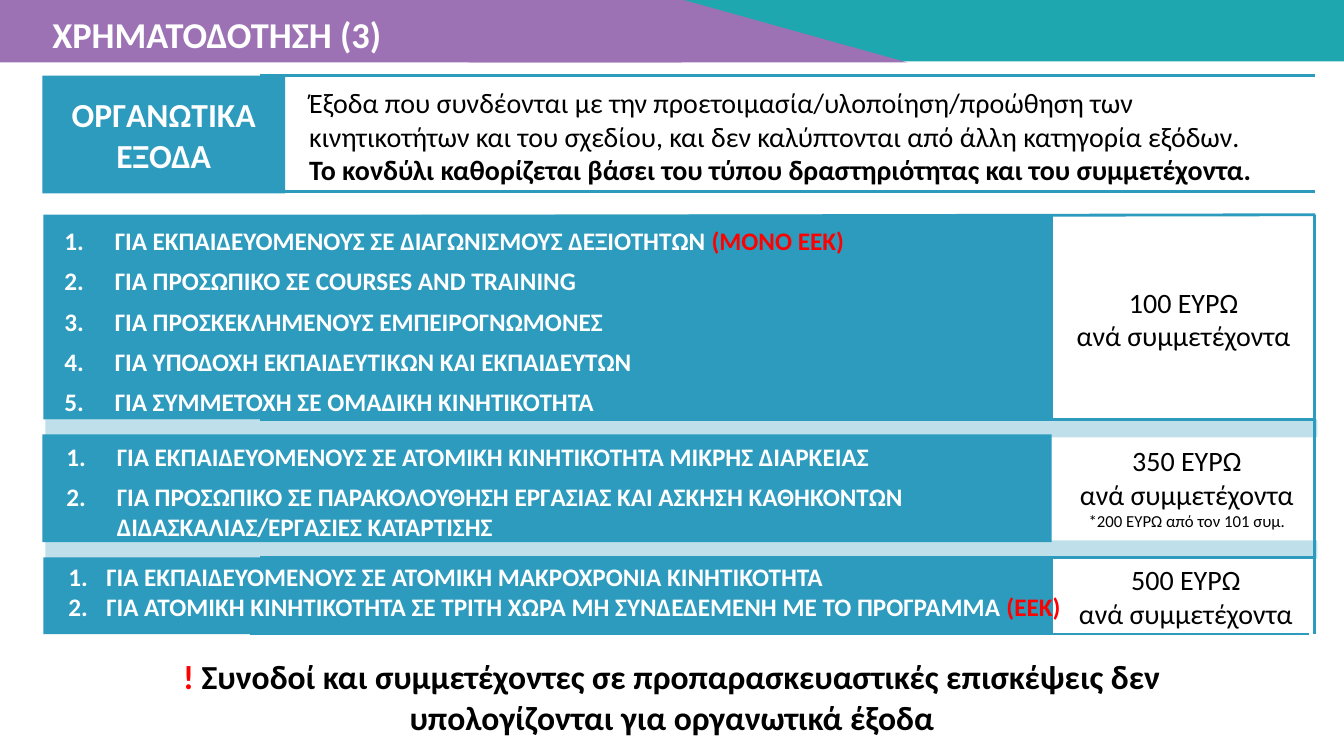
from lxml import etree
from pptx import Presentation
from pptx.dml.color import RGBColor
from pptx.enum.shapes import MSO_CONNECTOR, MSO_SHAPE
from pptx.enum.text import MSO_ANCHOR, MSO_AUTO_SIZE, PP_ALIGN
from pptx.oxml.ns import qn
from pptx.util import Pt

RECT, PEAK = MSO_SHAPE.RECTANGLE, MSO_SHAPE.ISOSCELES_TRIANGLE
LINE = MSO_CONNECTOR.STRAIGHT
LEFT, MID = PP_ALIGN.LEFT, PP_ALIGN.CENTER
TOP, CENTER = MSO_ANCHOR.TOP, MSO_ANCHOR.MIDDLE
FIXED = MSO_AUTO_SIZE.NONE

COLORS = {"teal": "1EA7AE", "purple": "9D72B5", "blue": "2D9BBD",
          "white": "FFFFFF", "black": "000000", "red": "FF0000"}


def color(name):
    return RGBColor.from_string(COLORS[name])


class Board:
    """Holds the style and the current slide."""
    font = "Calibri"
    stroke = 2

    def __init__(self, deck):
        self.slide = deck.slides.add_slide(deck.slide_layouts[5])
        self.shapes = self.slide.shapes

    def block(self, box, fill="blue", kind=RECT, alpha=None):
        shape = self.shapes.add_shape(kind, *map(Pt, box))
        shape.shadow.inherit = False
        shape.fill.solid()
        shape.fill.fore_color.rgb = color(fill)
        shape.line.fill.background()
        if alpha:
            tint = shape.element.spPr.find(".//" + qn("a:srgbClr"))
            etree.SubElement(tint, qn("a:alpha")).set("val", str(alpha * 1000))
        return shape

    def rule(self, *ends):
        line = self.shapes.add_connector(LINE, *map(Pt, ends))
        line.line.color.rgb = color("blue")
        line.line.width = Pt(self.stroke)
        etree.SubElement(line.element.spPr, qn("a:effectLst"))

    def label(self, shape, paras, size, tone="black", bold=False, align=LEFT,
              anchor=TOP, wrap=True, indent=0, after=0):
        """Each paragraph is a list of (text, changes) runs."""
        frame = shape.text_frame
        look = {"auto_size": FIXED, "word_wrap": wrap, "vertical_anchor": anchor}
        for key, value in look.items():
            setattr(frame, key, value)
        for index, runs in enumerate(paras):
            para = frame.add_paragraph() if index else frame.paragraphs[0]
            para.alignment = align
            para.space_after = Pt(after)
            if indent:
                self.number(para, indent)
            for text, change in runs:
                run = para.add_run()
                run.text = text
                style = {"name": self.font, "size": size, "bold": bold,
                         "tone": tone, **change}
                run.font.color.rgb = color(style.pop("tone"))
                style["size"] = Pt(style["size"])
                for key, value in style.items():
                    setattr(run.font, key, value)

    def number(self, para, indent):
        props = para._p.get_or_add_pPr()
        props.set("marL", str(Pt(indent)))
        props.set("indent", str(-Pt(indent)))
        mark = etree.SubElement(props, qn("a:buFont"))
        mark.set("typeface", "+mj-lt")
        etree.SubElement(props, qn("a:buAutoNum")).set("type", "arabicPeriod")

    def text(self, box, paras, size, **style):
        self.label(self.shapes.add_textbox(*map(Pt, box)), paras, size, **style)

    def title(self, box, words, size, **style):
        head = self.shapes.title
        for key, value in zip(("left", "top", "width", "height"), box):
            setattr(head, key, Pt(value))
        self.label(head, [[(words, {})]], size, **style)
        # Bring the title in front of the header bands
        head.element.getparent().append(head.element)


RED = {"tone": "red"}
EACH = [("ανά συμμετέχοντα", {})]

# Block, price box, list box, indent, space after, price lines, items
ROWS = [
    ((31, 153.4, 721, 146.2), (758, 200.2, 175, 55.4), (38.9, 157.7, 713, 145), 36, 7,
     [[("100 ΕΥΡΩ", {})], EACH],
     [[("ΓΙΑ ΕΚΠΑΙΔΕΥΟΜΕΝΟΥΣ ΣΕ ΔΙΑΓΩΝΙΣΜΟΥΣ ΔΕΞΙΟΤΗΤΩΝ ", {}), ("(ΜΟΝΟ ΕΕΚ)", RED)],
      [("ΓΙΑ ΠΡΟΣΩΠΙΚΟ ΣΕ COURSES AND TRAINING", {})],
      [("ΓΙΑ ΠΡΟΣΚΕΚΛΗΜΕΝΟΥΣ ΕΜΠΕΙΡΟΓΝΩΜΟΝΕΣ", {})],
      [("ΓΙΑ ΥΠΟΔΟΧΗ ΕΚΠΑΙΔΕΥΤΙΚΩΝ ΚΑΙ ΕΚΠΑΙΔΕΥΤΩΝ", {})],
      [("ΓΙΑ ΣΥΜΜΕΤΟΧΗ ΣΕ ΟΜΑΔΙΚΗ ΚΙΝΗΤΙΚΟΤΗΤΑ", {})]]),
    ((30.2, 310.3, 721, 77), (760.3, 313.2, 175, 70.6), (40.3, 311.8, 755, 152), 36, 7,
     [[("350 ΕΥΡΩ", {})], EACH, [("*200 ΕΥΡΩ από τον 101 συμ.", {"size": 12})]],
     [[("ΓΙΑ ΕΚΠΑΙΔΕΥΟΜΕΝΟΥΣ ΣΕ ΑΤΟΜΙΚΗ ΚΙΝΗΤΙΚΟΤΗΤΑ ΜΙΚΡΗΣ ΔΙΑΡΚΕΙΑΣ", {})],
      [("ΓΙΑ ΠΡΟΣΩΠΙΚΟ ΣΕ ΠΑΡΑΚΟΛΟΥΘΗΣΗ ΕΡΓΑΣΙΑΣ ΚΑΙ ΑΣΚΗΣΗ ΚΑΘΗΚΟΝΤΩΝ "
        "ΔΙΔΑΣΚΑΛΙΑΣ/ΕΡΓΑΣΙΕΣ ΚΑΤΑΡΤΙΣΗΣ", {})]]),
    ((31, 398.2, 721, 54.7), (759.6, 398.2, 175, 55.4), (41.8, 397.4, 727, 51), 27, 0,
     [[("500 ΕΥΡΩ", {})], EACH],
     [[("ΓΙΑ ΕΚΠΑΙΔΕΥΟΜΕΝΟΥΣ ΣΕ ΑΤΟΜΙΚΗ ΜΑΚΡΟΧΡΟΝΙΑ ΚΙΝΗΤΙΚΟΤΗΤΑ", {})],
      [("ΓΙΑ ΑΤΟΜΙΚΗ ΚΙΝΗΤΙΚΟΤΗΤΑ ΣΕ ΤΡΙΤΗ ΧΩΡΑ ΜΗ ΣΥΝΔΕΔΕΜΕΝΗ ΜΕ ΤΟ ΠΡΟΓΡΑΜΜΑ ", {}),
       ("(ΕΕΚ)", RED)]]),
]


def main():
    deck = Presentation()
    deck.slide_width, deck.slide_height = Pt(960), Pt(540)
    board = Board(deck)

    # Header bands and title
    board.block((347, 0, 613, 43.9), "teal")
    board.block((0, 0, 487, 44.6), "purple")
    peak = board.block((334.8, 0, 313.2, 44.6), "purple", PEAK)
    peak.adjustments[0] = 0.49
    board.title((30.2, 5, 252, 38.9), "ΧΡΗΜΑΤΟΔΟΤΗΣΗ (3)", 26,
                tone="white", bold=True, wrap=False)

    # Definition of the cost type
    board.text((213.8, 57.6, 714, 80),
               [[("Έξοδα που συνδέονται με την προετοιμασία/υλοποίηση/προώθηση των "
                  "κινητικοτήτων και του σχεδίου, και δεν καλύπτονται από άλλη "
                  "κατηγορία εξόδων.", {})],
                [("Το κονδύλι καθορίζεται βάσει του τύπου δραστηριότητας και του "
                  "συμμετέχοντα.", {"bold": True})]], 20)
    costs = board.block((30.2, 54, 173.5, 84.2))
    board.label(costs, [[("ΟΡΓΑΝΩΤΙΚΑ ΕΞΟΔΑ", {})]], 24, tone="white",
                bold=True, align=MID, anchor=CENTER)

    # Frame lines and first divider
    for y in (54, 136.8, 299.5, 398.2):
        board.rule(185.8, y, 939, y)
    board.rule(182.2, 154.8, 939.6, 153.4)
    board.rule(178.6, 452.9, 935.3, 452.9)
    board.rule(939, 153.4, 939, 452.9)
    board.block((32.4, 299.5, 908.6, 13), alpha=30)

    # Cost rows
    for block, price, area, indent, after, cost, items in ROWS:
        board.block(block)
        board.text(price, cost, 20, align=MID)
        board.text(area, items, 18, tone="white", bold=True,
                   indent=indent, after=after)

    # Second divider and closing note
    board.block((32.4, 386, 908.6, 13), alpha=30)
    board.text((77, 465.1, 805.7, 65.5),
               [[("!", RED),
                 (" Συνοδοί και συμμετέχοντες σε προπαρασκευαστικές επισκέψεις δεν "
                  "υπολογίζονται για οργανωτικά έξοδα", {})]],
               24, bold=True, align=MID)
    deck.save("out.pptx")


if __name__ == "__main__":
    main()
